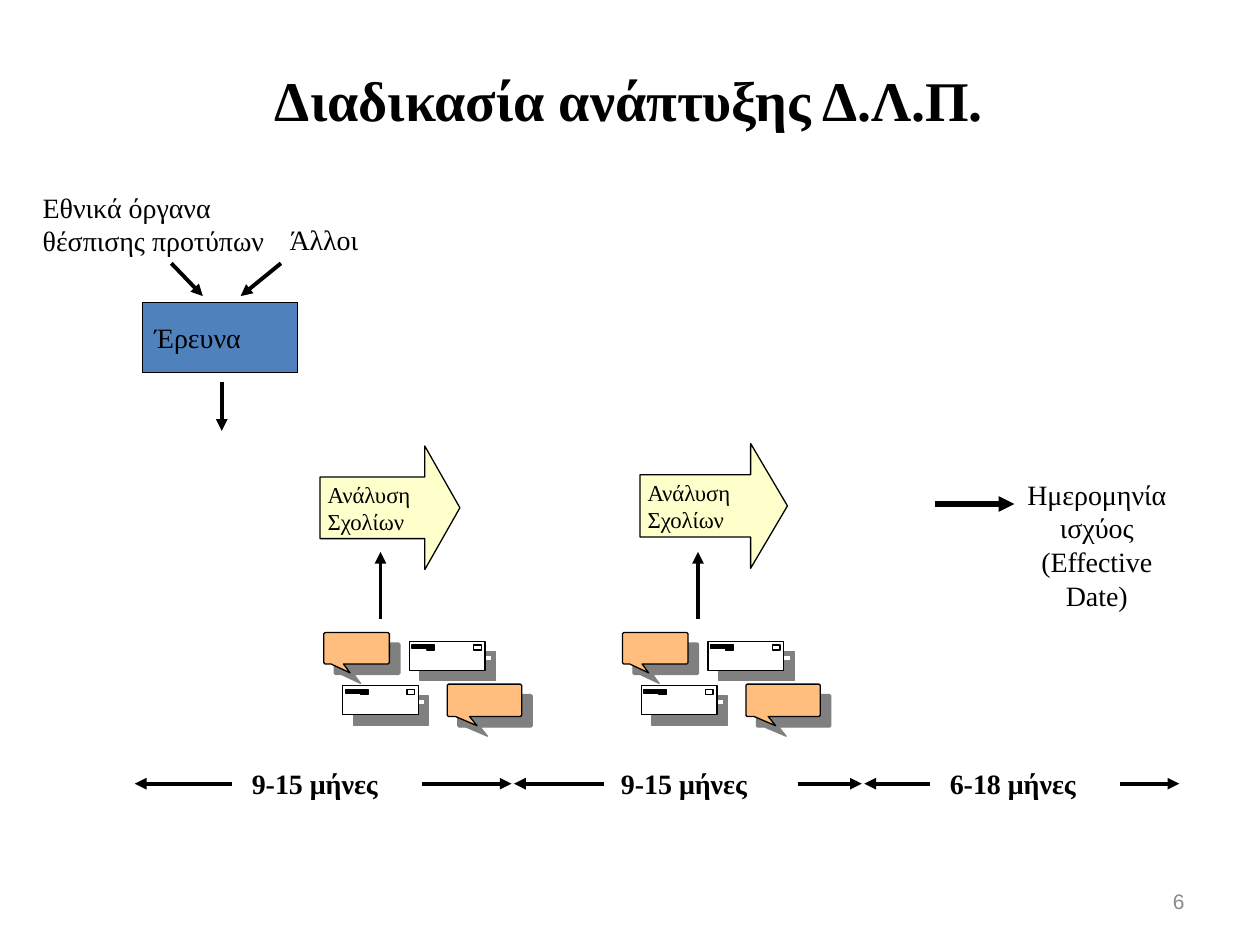
from dataclasses import dataclass

from lxml.etree import SubElement
from pptx import Presentation
from pptx.dml.color import RGBColor
from pptx.enum.shapes import MSO_CONNECTOR as Connector, MSO_SHAPE as Shape
from pptx.enum.text import MSO_ANCHOR as Anchor, PP_ALIGN as Align
from pptx.oxml.ns import qn
from pptx.util import Inches, Pt


@dataclass(frozen=True)
class Theme:
    serif: str = "Times New Roman"
    sans: str = "Arial"
    black: str = "000000"
    white: str = "FFFFFF"
    gray: str = "898989"
    shadow: str = "808080"
    blue: str = "4F81BD"
    yellow: str = "FFFFCC"
    orange: str = "FFBE7D"
    title: int = 32
    body: int = 16
    analysis: int = 13
    number: int = 12
    outline: float = 0.75
    arrow: float = 2.25
    heavy_arrow: float = 3


THEME = Theme()

TITLE = ("Διαδικασία ανάπτυξης Δ.Λ.Π.", (0.35, 0.28, 9.29, 1.02))
SLIDE_NUMBER = ("6", (7.17, 6.95, 2.33, 0.4))
RESEARCH = ("Έρευνα", (1.13, 2.4, 1.23, 0.56))
SOURCES = [
    ("Εθνικά όργανα θέσπισης προτύπων", (0.24, 1.46, 2.05, 0.63)),
    ("Άλλοι", (2.2, 1.72, 1.03, 0.37)),
]
EFFECTIVE_DATE = ("Ημερομηνία ισχύος (Effective Date)", (8, 3.74, 1.41, 1.16))
ANALYSES = [  # text, box, arrowhead proportion
    ("Ανάλυση Σχολίων", (2.54, 3.54, 1.11, 0.98), 0.284),
    ("Ανάλυση Σχολίων", (5.08, 3.52, 1.17, 0.99), 0.295),
]
PERIODS = [  # text, label left, start of period, left shaft end, right shaft start, end
    ("9-15 μήνες", 1.9, 1.07, 1.84, 3.35, 4.06),
    ("9-15 μήνες", 4.83, 4.08, 4.79, 6.33, 6.84),
    ("6-18 μήνες", 7.44, 6.86, 7.38, 8.89, 9.36),
]
TIMELINE_Y = 6.22
FLOW_ARROWS = [  # from, to
    ((1.36, 2.09), (1.61, 2.35)),
    ((2.23, 2.09), (1.91, 2.35)),
    ((1.76, 3.03), (1.76, 3.42)),
    ((3.02, 4.91), (3.02, 4.38)),
    ((5.54, 4.91), (5.54, 4.38)),
]
DATE_ARROW = ((7.42, 4), (8.05, 4))

COMMENT_GROUPS = [(2.57, 5.02), (4.94, 5.02)]
ENVELOPES = [(0.68, 0.07), (0.15, 0.42)]  # offsets within a comment group
BUBBLES = [(0, 0, 0.52, 0.32), (0.98, 0.41, 0.59, 0.33)]
ENVELOPE_PARTS = [  # outline, stamp, address lines
    (0, 0, 0.6, 0.23),
    (0.51, 0.03, 0.06, 0.04),
    (0.02, 0.03, 0.18, 0.01),
    (0.02, 0.04, 0.18, 0.01),
    (0.02, 0.05, 0.18, 0.01),
    (0.14, 0.06, 0.06, 0.01),
]


def color(value):
    return RGBColor.from_string(value)


def place(shape, box):
    shape.left, shape.top, shape.width, shape.height = map(Inches, box)


def write(shape, text, size=THEME.body, bold=False, align=Align.LEFT, anchor=Anchor.TOP,
          font=THEME.serif, ink=THEME.black):
    frame = shape.text_frame
    frame.word_wrap = True
    frame.vertical_anchor = anchor
    paragraph = frame.paragraphs[0]
    paragraph.text = text
    paragraph.alignment = align
    paragraph.font.name = font
    paragraph.font.size = Pt(size)
    paragraph.font.bold = bold
    paragraph.font.color.rgb = color(ink)


def add_text(slide, text, box, **style):
    write(slide.shapes.add_textbox(*map(Inches, box)), text, **style)


def paint(shape, fill):
    shape.shadow.inherit = False
    shape.fill.solid()
    shape.fill.fore_color.rgb = color(fill)
    shape.line.color.rgb = color(THEME.black)
    shape.line.width = Pt(THEME.outline)


def add_box(slide, kind, text, box, fill, **style):
    shape = slide.shapes.add_shape(kind, *map(Inches, box))
    paint(shape, fill)
    write(shape, text, anchor=Anchor.MIDDLE, **style)
    return shape


def add_arrow(slide, start, end, width=THEME.arrow):
    arrow = slide.shapes.add_connector(Connector.STRAIGHT, *map(Inches, (*start, *end)))
    arrow.line.color.rgb = color(THEME.black)
    arrow.line.width = Pt(width)
    SubElement(arrow.line._get_or_add_ln(), qn("a:tailEnd"), type="triangle")
    SubElement(arrow._element.spPr, qn("a:effectLst"))


def add_outline(slide, contours, fill):
    """Draw closed contours as one freeform with a hard offset shadow."""
    first, *others = [[tuple(map(Inches, point)) for point in c] for c in contours]
    builder = slide.shapes.build_freeform(*first[0])
    builder.add_line_segments(first[1:], close=True)
    for contour in others:
        builder.move_to(*contour[0])
        builder.add_line_segments(contour[1:], close=True)
    shape = builder.convert_to_shape()
    paint(shape, fill)
    effects = shape._element.spPr.find(qn("a:effectLst"))
    shadow = SubElement(effects, qn("a:outerShdw"), blurRad="0", dist=str(Pt(8.5)),
                        dir=str(45 * 60000), algn="ctr", rotWithShape="0")
    SubElement(shadow, qn("a:srgbClr"), val=THEME.shadow)


def add_envelope(slide, x, y):
    contours = []
    for left, top, width, height in ENVELOPE_PARTS:
        x1, y1 = x + left, y + top
        x2, y2 = x1 + width, y1 + height
        contours.append([(x1, y1), (x2, y1), (x2, y2), (x1, y2)])
    add_outline(slide, contours, THEME.white)


def add_bubble(slide, x, y, width, height):
    corner, right, bottom = 0.01, x + width, y + 0.78 * height
    tail = [(x + 0.11 * width, bottom), (x + 0.4 * width, y + height),
            (x + 0.3 * width, bottom)]
    points = [(x + corner, y), (x, y + corner), (x, bottom - corner), (x + corner, bottom),
              *tail, (right - corner, bottom), (right, bottom - corner),
              (right, y + corner), (right - corner, y)]
    add_outline(slide, [points], THEME.orange)


def main():
    presentation = Presentation()
    presentation.slide_width, presentation.slide_height = Inches(10), Inches(7.5)
    slide = presentation.slides.add_slide(presentation.slide_layouts[5])

    title, box = TITLE
    place(slide.shapes.title, box)
    write(slide.shapes.title, title, size=THEME.title, bold=True, align=Align.CENTER,
          anchor=Anchor.MIDDLE)
    add_text(slide, *SLIDE_NUMBER, size=THEME.number, align=Align.RIGHT,
             anchor=Anchor.MIDDLE, font=THEME.sans, ink=THEME.gray)

    for x, y in COMMENT_GROUPS:
        for dx, dy in ENVELOPES:
            add_envelope(slide, x + dx, y + dy)
        for dx, dy, width, height in BUBBLES:
            add_bubble(slide, x + dx, y + dy, width, height)

    for text, box, head in ANALYSES:
        arrow = add_box(slide, Shape.RIGHT_ARROW, text, box, THEME.yellow,
                        size=THEME.analysis)
        arrow.adjustments[1] = head
        arrow.text_frame.margin_left = Inches(0.06)
        arrow.text_frame.margin_right = Inches(0.02)

    add_box(slide, Shape.RECTANGLE, *RESEARCH, THEME.blue)
    for text, box in SOURCES:
        add_text(slide, text, box)
    add_text(slide, *EFFECTIVE_DATE, align=Align.CENTER)
    for start, end in FLOW_ARROWS:
        add_arrow(slide, start, end)
    add_arrow(slide, *DATE_ARROW, width=THEME.heavy_arrow)

    for text, left, start, shaft_left, shaft_right, end in PERIODS:
        add_text(slide, text, (left, 6.06, 1.44, 0.31), bold=True, anchor=Anchor.MIDDLE)
        add_arrow(slide, (shaft_left, TIMELINE_Y), (start, TIMELINE_Y))
        add_arrow(slide, (shaft_right, TIMELINE_Y), (end, TIMELINE_Y))

    presentation.save("out.pptx")


if __name__ == "__main__":
    main()
